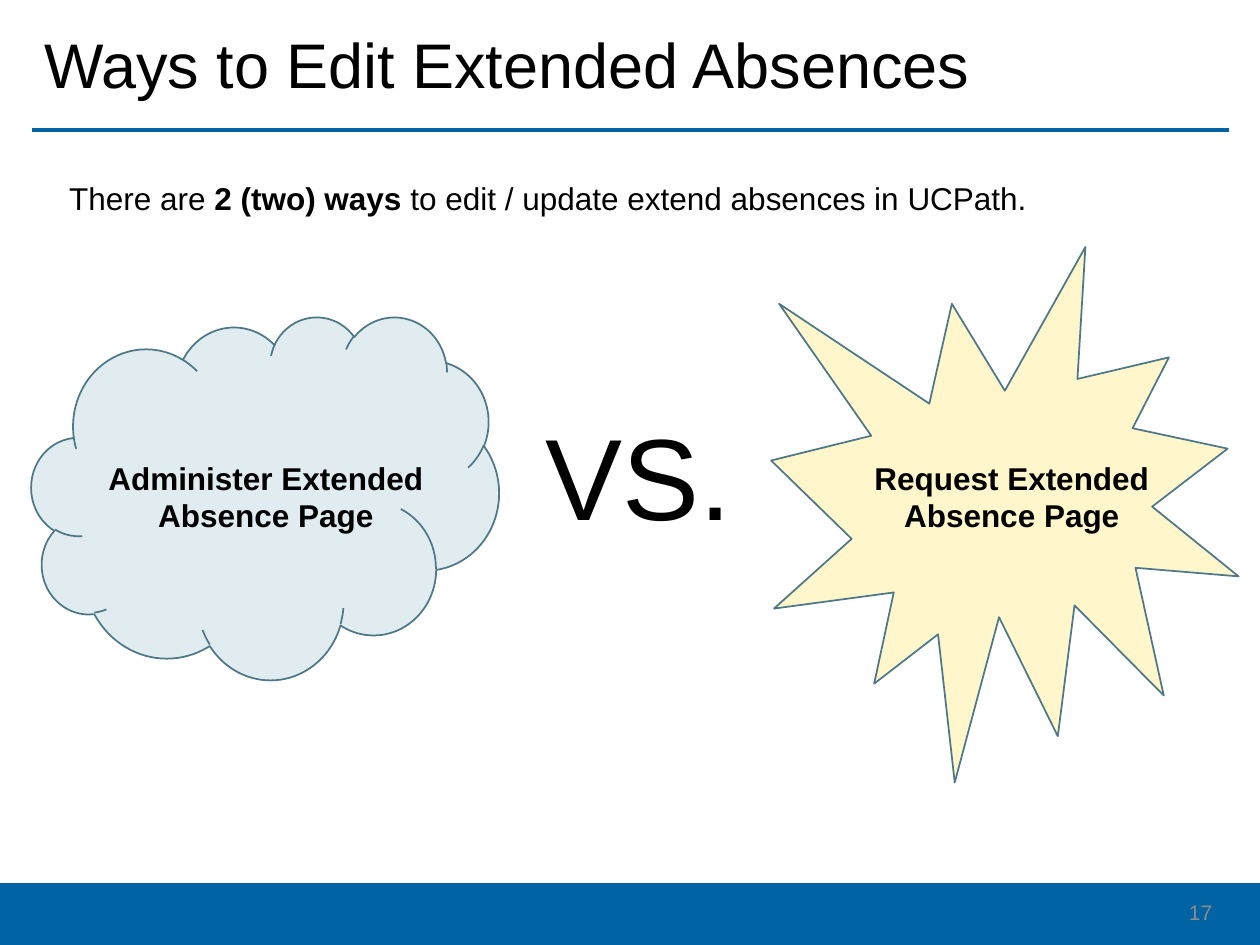
from pptx import Presentation
from pptx import util as u
from pptx.dml.color import RGBColor
from pptx.enum import shapes, text
from pptx.oxml.ns import qn
from lxml import etree

COLORS = {
    "blue": "0064A4",
    "black": "000000",
    "gray": "8C8C8C",
    "edge": "4E7888",
    "cloud": "E1ECF1",
    "burst": "FFF6CC",
}
FONT = "Arial"
LEFT, CENTER, RIGHT = text.PP_ALIGN.LEFT, text.PP_ALIGN.CENTER, text.PP_ALIGN.RIGHT
TOP, MIDDLE = text.MSO_ANCHOR.TOP, text.MSO_ANCHOR.MIDDLE


def color(name):
    return RGBColor.from_string(COLORS[name])


def place(item, box):
    item.left, item.top, item.width, item.height = [u.Inches(n) for n in box]


def write(item, runs, size, tint="black", align=LEFT, anchor=TOP, spacing=None):
    """Fill one paragraph from (words, bold) pairs."""
    frame = item.text_frame
    frame.word_wrap = True
    frame.auto_size = text.MSO_AUTO_SIZE.NONE
    frame.vertical_anchor = anchor
    para = frame.paragraphs[0]
    para.alignment = align
    if spacing:
        para.line_spacing = spacing
    for words, bold in runs:
        run = para.add_run()
        run.text = words
        run.font.name = FONT
        run.font.size = u.Pt(size)
        run.font.bold = bold
        run.font.color.rgb = color(tint)


def add_title(slide, words, box):
    title = slide.shapes.title
    place(title, box)
    write(title, [(words, False)], 36, anchor=MIDDLE, spacing=0.9)


def add_text(slide, box, runs, size, **style):
    item = slide.shapes.add_textbox(*[u.Inches(n) for n in box])
    write(item, runs, size, **style)


def add_shape(slide, kind, box, fill, edge=None):
    shape = slide.shapes.add_shape(kind, *[u.Inches(n) for n in box])
    shape.shadow.inherit = False
    shape.fill.solid()
    shape.fill.fore_color.rgb = color(fill)
    if edge:
        shape.line.color.rgb = color(edge)
        shape.line.width = u.Pt(1)
    else:
        shape.line.fill.background()


def add_rule(slide, left, right, top):
    rule = slide.shapes.add_connector(
        shapes.MSO_CONNECTOR.STRAIGHT,
        u.Inches(left), u.Inches(top), u.Inches(right), u.Inches(top))
    rule.line.color.rgb = color("blue")
    rule.line.width = u.Pt(2.25)
    etree.SubElement(rule._element.spPr, qn("a:effectLst"))


def main():
    deck = Presentation()
    deck.slide_width, deck.slide_height = u.Inches(10), u.Inches(7.5)
    slide = deck.slides.add_slide(deck.slide_layouts[5])
    kinds = shapes.MSO_SHAPE

    # Frame: title, rule and footer band
    add_rule(slide, 0.25, 9.75, 1.03)
    add_shape(slide, kinds.RECTANGLE, (0, 7.01, 10, 0.5), "blue")
    add_title(slide, "Ways to Edit Extended Absences", (0.25, 0.05, 9.5, 0.98))
    add_text(slide, (7.47, 7.04, 2.25, 0.4), [("17", False)], 12,
             tint="gray", align=RIGHT, anchor=MIDDLE)

    # Lead sentence
    lead = [("There are ", False), ("2 (two) ways ", True),
            ("to edit / update extend absences in UCPath.", False)]
    add_text(slide, (0.45, 1.37, 8.38, 0.4), lead, 18)

    # The two ways, side by side
    ways = [
        (kinds.CLOUD, (0.25, 2.51, 3.71, 2.88), "cloud",
         "Administer Extended Absence Page", 0.45, 3.32),
        (kinds.EXPLOSION1, (6.12, 1.96, 3.71, 4.25), "burst",
         "Request Extended Absence Page", 6.51, 3.04),
    ]
    for kind, box, fill, label, left, width in ways:
        add_shape(slide, kind, box, fill, "edge")
        add_text(slide, (left, 3.59, width, 0.71), [(label, True)], 18, align=CENTER)
    add_text(slide, (4.23, 3.29, 1.8, 1.2), [("VS.", False)], 66, spacing=0.9)

    deck.save("out.pptx")


if __name__ == "__main__":
    main()
